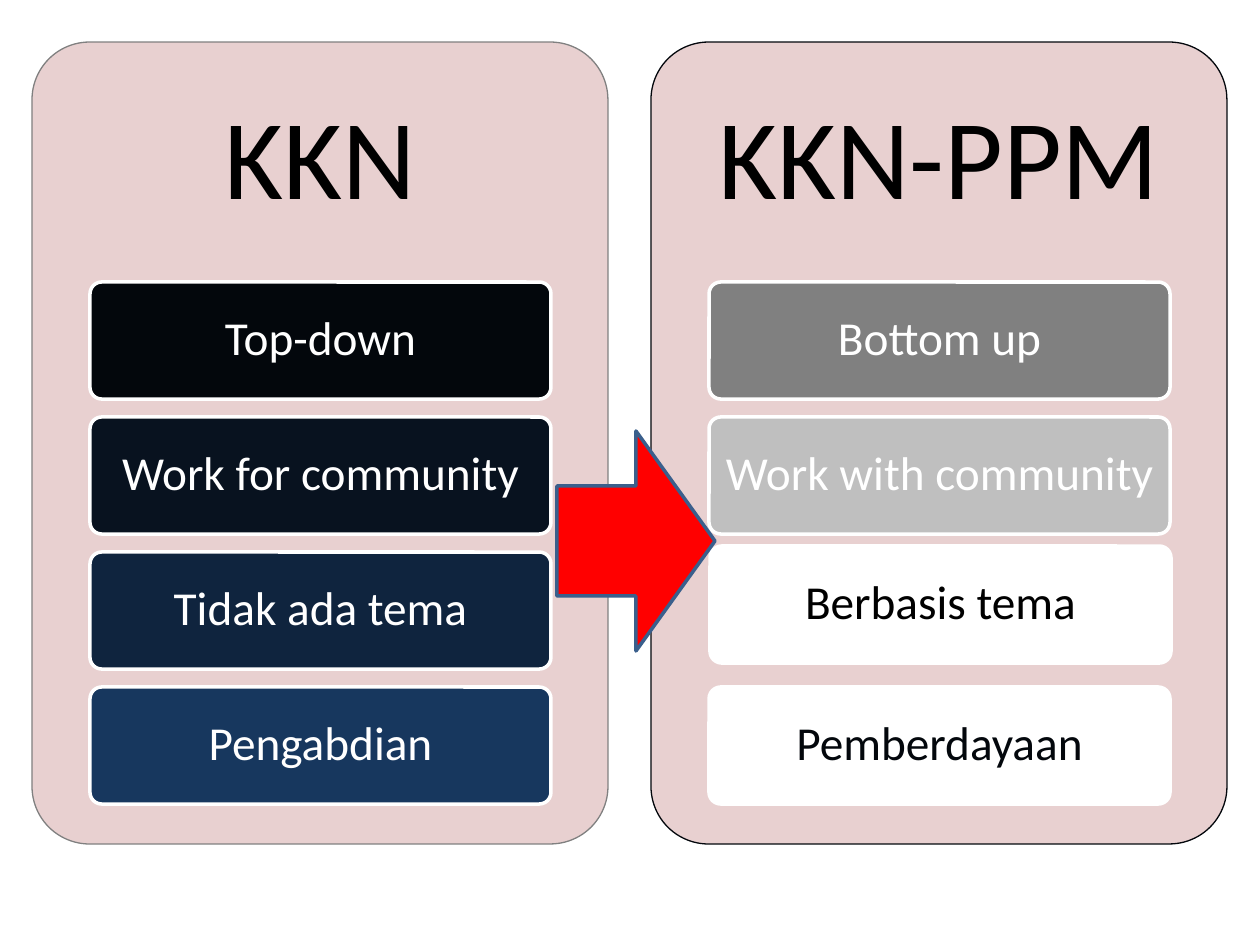
"""Build a slide comparing KKN with KKN-PPM in two cards joined by an arrow."""
from pptx import Presentation
from pptx.dml.color import RGBColor as RGB
from pptx.enum.shapes import MSO_SHAPE as SHAPE
from pptx.enum.text import MSO_ANCHOR as ANCHOR, PP_ALIGN as ALIGN
from pptx.util import Pt

PX = 914400 / 126
WHITE = RGB(0xFF, 0xFF, 0xFF)
BLACK = RGB(0x00, 0x00, 0x00)
INK = RGB(0x03, 0x07, 0x0C)
NIGHT = RGB(0x08, 0x12, 0x1F)
NAVY = RGB(0x0F, 0x24, 0x3E)
BLUE = RGB(0x17, 0x37, 0x5E)
GRAY = RGB(0x80, 0x80, 0x80)
SILVER = RGB(0xBF, 0xBF, 0xBF)
ROSE = RGB(0xE8, 0xD0, 0xD0)
RED = RGB(0xFF, 0x00, 0x00)
STEEL = RGB(0x3A, 0x5F, 0x8C)

deck = Presentation()
deck.slide_width, deck.slide_height = int(1260 * PX), int(945 * PX)
slide = deck.slides.add_slide(deck.slide_layouts[6])


def draw(kind, box, fill, line, width):
    shape = slide.shapes.add_shape(kind, *[int(v * PX) for v in box])
    shape.shadow.inherit = False
    shape.fill.solid()
    shape.fill.fore_color.rgb = fill
    shape.line.color.rgb = line
    shape.line.width = Pt(width)
    if kind == SHAPE.ROUNDED_RECTANGLE:
        shape.adjustments[0] = 0.1
    return shape


def write(shape, text, size=27, color=WHITE, inset=8):
    frame = shape.text_frame
    frame.word_wrap = True
    frame.vertical_anchor = ANCHOR.MIDDLE
    frame.margin_left = frame.margin_right = int(inset * PX)
    frame.margin_top = frame.margin_bottom = int(inset * PX)
    para = frame.paragraphs[0]
    para.alignment = ALIGN.CENTER
    para.line_spacing = 0.9
    run = para.add_run()
    run.text = text
    run.font.name = "Calibri"
    run.font.size = Pt(size)
    run.font.color.rgb = color


CARDS = [
    ("KKN", 32, GRAY, [
        ("Top-down", INK, WHITE, 0, 0),
        ("Work for community", NIGHT, WHITE, 0, 0),
        ("Tidak ada tema", NAVY, WHITE, 0, 0),
        ("Pengabdian", BLUE, WHITE, 0, 0),
    ]),
    ("KKN-PPM", 651, INK, [
        ("Bottom up", GRAY, WHITE, 0, 0),
        ("Work with community", SILVER, WHITE, 0, 0),
        ("Berbasis tema", WHITE, BLACK, 1, -6),
        ("Pemberdayaan", WHITE, INK, 0, 0),
    ]),
]

for title, left, edge, items in CARDS:
    draw(SHAPE.ROUNDED_RECTANGLE, (left, 42, 576, 802), ROSE, edge, 0.75)
    head = slide.shapes.add_textbox(*[int(v * PX) for v in (left, 42, 576, 241)])
    write(head, title, size=65, color=BLACK, inset=34)
    for row, (text, fill, color, dx, dy) in enumerate(items):
        box = (left + 58 + dx, 282 + 135 * row + dy, 461, 117)
        item = draw(SHAPE.ROUNDED_RECTANGLE, box, fill, WHITE, 2)
        write(item, text, color=color)

draw(SHAPE.RIGHT_ARROW, (557, 431, 158, 220), RED, STEEL, 2)

deck.save("out.pptx")
